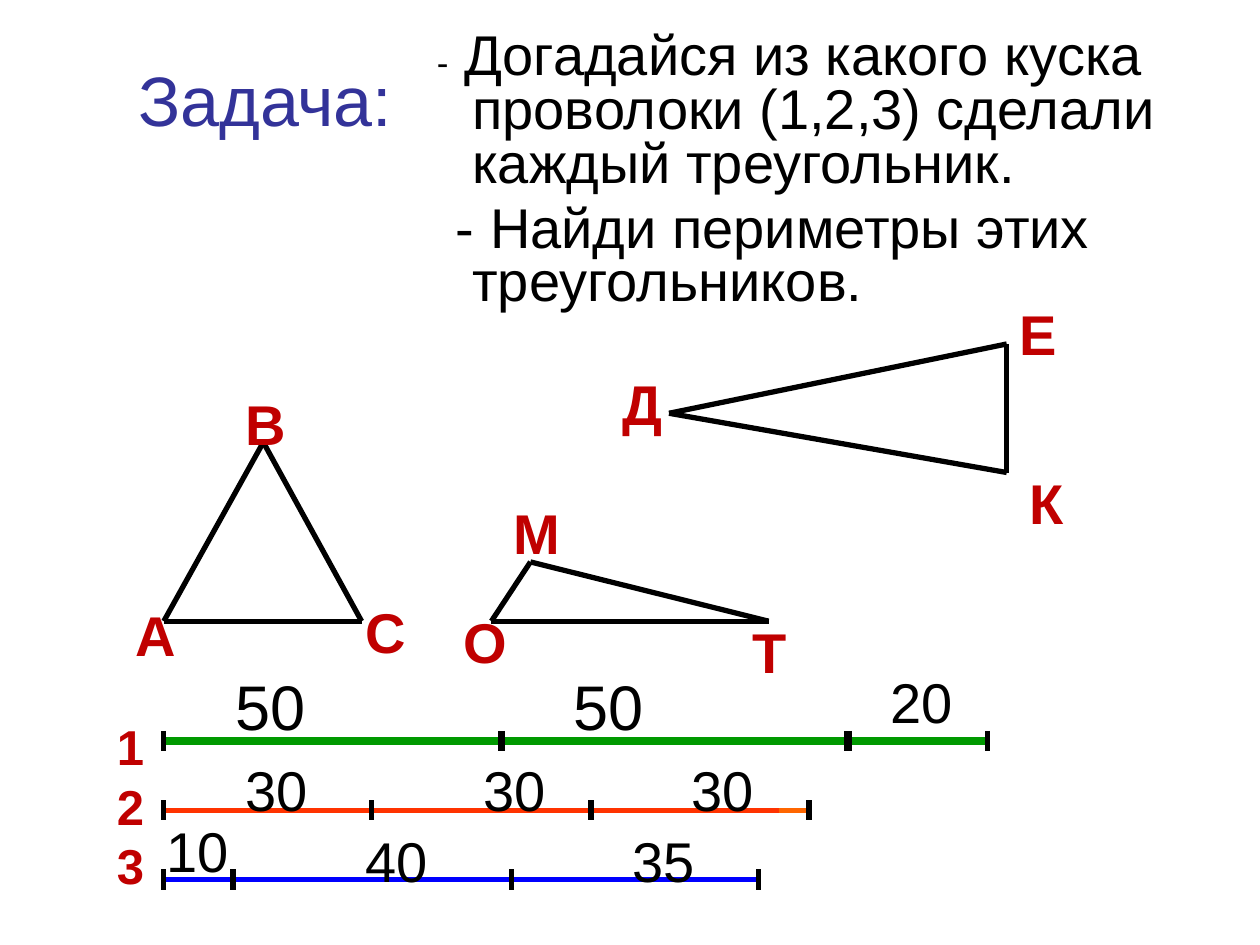
from dataclasses import dataclass
from itertools import combinations

from lxml import etree
from pptx import Presentation
from pptx.dml.color import RGBColor
from pptx.enum.shapes import MSO_CONNECTOR
from pptx.enum.text import MSO_ANCHOR, PP_ALIGN
from pptx.oxml.ns import qn
from pptx.slide import Slide
from pptx.text.text import TextFrame
from pptx.util import Inches, Pt

STRAIGHT = MSO_CONNECTOR.STRAIGHT
MIDDLE = MSO_ANCHOR.MIDDLE
CENTER = PP_ALIGN.CENTER
Point = tuple[float, float]


@dataclass(frozen=True)
class Theme:
    font: str = "Arial"
    black: str = "000000"
    title_color: str = "333399"
    name_color: str = "C00000"
    green: str = "009900"
    red: str = "FF3300"
    orange: str = "FF6600"
    blue: str = "0000FF"
    title_size: int = 40
    body_size: int = 32
    dash_size: int = 20
    number_size: int = 28
    large_size: int = 36
    thin: float = 3
    thick: float = 4.5


THEME = Theme()
LABEL_HEIGHTS = {THEME.number_size: 0.57, THEME.body_size: 0.64, THEME.large_size: 0.71}


@dataclass(frozen=True)
class Label:
    text: str
    left: float
    top: float
    width: float
    size: int = THEME.body_size
    color: str = THEME.black
    bold: bool = False


@dataclass(frozen=True)
class Stroke:
    start: float
    end: float
    color: str
    width: float = THEME.thin


@dataclass(frozen=True)
class Tick:
    x: float
    width: float = THEME.thin


@dataclass(frozen=True)
class Wire:
    y: float
    strokes: list[Stroke]
    ticks: list[Tick]
    labels: list[Label]


def vertex(text: str, left: float, top: float, width: float) -> Label:
    return Label(text, left, top, width, color=THEME.name_color, bold=True)


def wire_number(text: str, top: float, width: float) -> Label:
    return Label(text, 0.83, top, width, THEME.number_size, THEME.name_color, True)


WIRES = [
    Wire(6.98, [Stroke(1.3, 6.02, THEME.blue)],
         [Tick(1.3), Tick(1.85), Tick(4.06), Tick(6.02)],
         [wire_number("3", 6.58, 0.42), Label("10", 1.22, 6.43, 1.42),
          Label("40", 2.8, 6.51, 1.34), Label("35", 4.92, 6.51, 0.89)]),
    Wire(6.43, [Stroke(1.3, 6.18, THEME.red), Stroke(6.18, 6.42, THEME.orange)],
         [Tick(1.3), Tick(2.95), Tick(4.69), Tick(6.42)],
         [wire_number("2", 6.11, 0.48),
          *(Label("30", left, 5.95, 0.7) for left in (1.85, 3.74, 5.39))]),
    Wire(5.88, [Stroke(1.3, 7.84, THEME.green, THEME.thick)],
         [Tick(1.3), Tick(3.98, THEME.thick), Tick(6.73, THEME.thick), Tick(7.84)],
         [wire_number("1", 5.64, 0.34),
          Label("50", 1.77, 5.25, 0.76, THEME.large_size),
          Label("50", 4.45, 5.25, 0.76, THEME.large_size),
          Label("20", 6.97, 5.25, 0.7)]),
]
TICK_HALF = 0.08

TRIANGLES: list[list[Point]] = [
    [(1.3, 4.93), (2.09, 3.51), (2.87, 4.93)],
    [(3.9, 4.93), (4.21, 4.46), (6.1, 4.93)],
    [(5.31, 3.28), (7.99, 2.73), (7.99, 3.75)],
]
VERTICES = [
    vertex("А", 0.98, 4.72, 0.39),
    vertex("В", 1.85, 3.04, 0.49),
    vertex("С", 2.8, 4.69, 0.52),
    vertex("О", 3.58, 4.77, 0.55),
    vertex("М", 3.98, 3.91, 0.65),
    vertex("Т", 5.87, 4.85, 0.65),
    vertex("Д", 4.84, 2.88, 0.52),
    vertex("Е", 7.99, 2.33, 0.66),
    vertex("К", 8.07, 3.67, 0.47),
]


def add_line(slide: Slide, start: Point, end: Point, color: str, width: float) -> None:
    line = slide.shapes.add_connector(
        STRAIGHT, *(Inches(value) for value in (*start, *end)))
    line.line.color.rgb = RGBColor.from_string(color)
    line.line.width = Pt(width)
    etree.SubElement(line._element.spPr, qn("a:effectLst"))


def add_text_frame(slide: Slide, left: float, top: float,
                   width: float, height: float) -> TextFrame:
    box = slide.shapes.add_textbox(
        Inches(left), Inches(top), Inches(width), Inches(height))
    box.text_frame.word_wrap = True
    return box.text_frame


def add_run(paragraph, text: str, size: int, color: str, bold: bool = False) -> None:
    run = paragraph.add_run()
    run.text = text
    run.font.name = THEME.font
    run.font.size = Pt(size)
    run.font.bold = bold
    run.font.color.rgb = RGBColor.from_string(color)


def add_label(slide: Slide, label: Label) -> None:
    frame = add_text_frame(slide, label.left, label.top, label.width,
                           LABEL_HEIGHTS[label.size])
    add_run(frame.paragraphs[0], label.text, label.size, label.color, label.bold)


def add_wire(slide: Slide, wire: Wire) -> None:
    for stroke in wire.strokes:
        add_line(slide, (stroke.start, wire.y), (stroke.end, wire.y),
                 stroke.color, stroke.width)
    for tick in wire.ticks:
        add_line(slide, (tick.x, wire.y - TICK_HALF), (tick.x, wire.y + TICK_HALF),
                 THEME.black, tick.width)
    for label in wire.labels:
        add_label(slide, label)


def add_title(slide: Slide) -> None:
    frame = add_text_frame(slide, 0.5, 0.33, 3.21, 0.9)
    frame.vertical_anchor = MIDDLE
    frame.paragraphs[0].alignment = CENTER
    add_run(frame.paragraphs[0], "Задача:", THEME.title_size, THEME.title_color)


def add_task(slide: Slide) -> None:
    frame = add_text_frame(slide, 3.27, 0.21, 6.54, 2.28)
    first, second = frame.paragraphs[0], frame.add_paragraph()
    for paragraph, indent in ((first, -0.28), (second, -0.13)):
        properties = paragraph._p.get_or_add_pPr()
        properties.set("marL", str(Inches(0.38)))
        properties.set("indent", str(Inches(indent)))
        paragraph.line_spacing = 0.8
    second.space_before = Pt(6.4)
    add_run(first, "-", THEME.dash_size, THEME.black)
    add_run(first, " Догадайся из какого куска проволоки (1,2,3) сделали "
            "каждый треугольник.", THEME.body_size, THEME.black)
    add_run(second, "- Найди периметры этих треугольников.",
            THEME.body_size, THEME.black)


def main() -> None:
    presentation = Presentation()
    presentation.slide_width, presentation.slide_height = Inches(10), Inches(7.5)
    slide = presentation.slides.add_slide(presentation.slide_layouts[6])
    add_title(slide)
    add_task(slide)
    for wire in WIRES:
        add_wire(slide, wire)
    for corners in TRIANGLES:
        for start, end in combinations(corners, 2):
            add_line(slide, start, end, THEME.black, THEME.thin)
    for label in VERTICES:
        add_label(slide, label)
    presentation.save("out.pptx")


if __name__ == "__main__":
    main()
